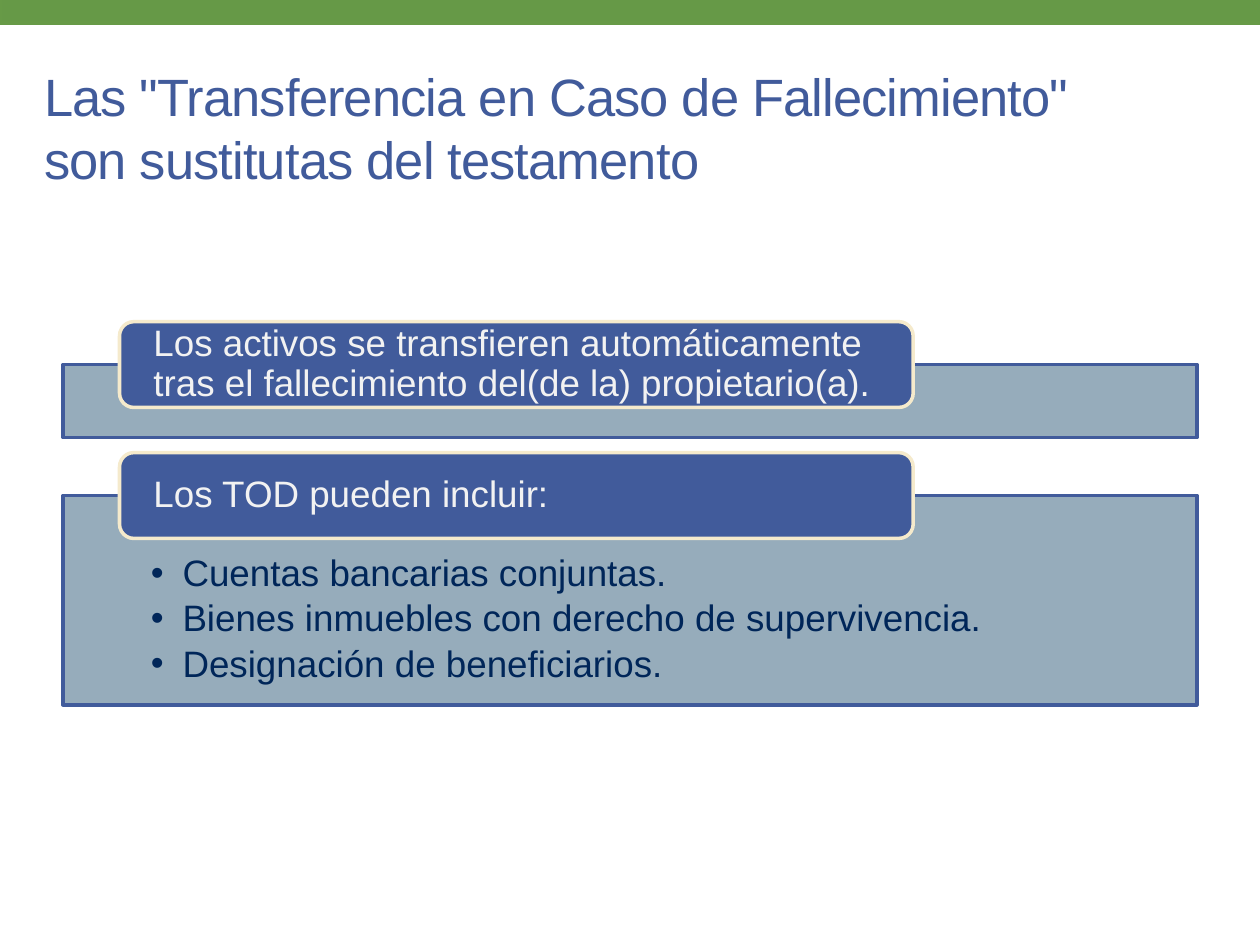
from dataclasses import dataclass

from lxml import etree
from pptx import Presentation
from pptx.dml.color import RGBColor
from pptx.enum.shapes import MSO_SHAPE
from pptx.enum.text import MSO_ANCHOR, PP_ALIGN
from pptx.oxml.ns import qn
from pptx.util import Cm, Pt

RECTANGLE = MSO_SHAPE.RECTANGLE
ROUNDED = MSO_SHAPE.ROUNDED_RECTANGLE
TOP, MIDDLE = MSO_ANCHOR.TOP, MSO_ANCHOR.MIDDLE
LEFT = PP_ALIGN.LEFT


@dataclass(frozen=True)
class Theme:
    font: str = "Arial"
    title_size: float = 30
    body_size: float = 21
    line_width: float = 2
    blue: str = "415B9B"
    navy: str = "002659"
    panel: str = "8BA4B4"
    cream: str = "F5EACC"
    label_text: str = "F2F2F2"
    green: str = "669947"
    green_line: str = "679A47"


@dataclass(frozen=True)
class Box:
    left: float
    top: float
    width: float
    height: float

    def lengths(self) -> tuple:
        return Cm(self.left), Cm(self.top), Cm(self.width), Cm(self.height)


@dataclass(frozen=True)
class Section:
    label: str
    height: float
    bullets: tuple = ()


THEME = Theme()
TITLE_LINES = ('Las "Transferencia en Caso de Fallecimiento" ', "son sustitutas del testamento")
SECTIONS = (
    Section("Los activos se transfieren automáticamente tras el fallecimiento "
            "del(de la) propietario(a).", 1.47),
    Section("Los TOD pueden incluir:", 4.22, (
        "Cuentas bancarias conjuntas.",
        "Bienes inmuebles con derecho de supervivencia.",
        "Designación de beneficiarios.",
    )),
)
FIRST_PANEL_TOP, PANEL_GAP = 7.35, 1.17
LABEL_HEIGHT = 1.73


def add_block(slide, preset, box: Box, fill: str, line: str):
    shape = slide.shapes.add_shape(preset, *box.lengths())
    shape.shadow.inherit = False
    shape.fill.solid()
    shape.fill.fore_color.rgb = RGBColor.from_string(fill)
    shape.line.color.rgb = RGBColor.from_string(line)
    shape.line.width = Pt(THEME.line_width)
    return shape


def prepare_frame(shape, margins: tuple, anchor):
    frame = shape.text_frame
    frame.word_wrap = True
    frame.vertical_anchor = anchor
    (frame.margin_left, frame.margin_top,
     frame.margin_right, frame.margin_bottom) = (Cm(margin) for margin in margins)
    return frame


def add_run(paragraph, text: str, size: float, color: str):
    paragraph.alignment = LEFT
    run = paragraph.add_run()
    run.text = text
    run.font.name = THEME.font
    run.font.size = Pt(size)
    run.font.color.rgb = RGBColor.from_string(color)
    return run


def add_title(slide) -> None:
    shape = slide.shapes.add_textbox(*Box(0.89, 1.26, 22.86, 2.62).lengths())
    paragraph = prepare_frame(shape, (0, 0, 0, 0), MIDDLE).paragraphs[0]
    for index, line in enumerate(TITLE_LINES):
        if index:
            paragraph.add_line_break()
        run = add_run(paragraph, line, THEME.title_size, THEME.blue)
        run.font._element.set("spc", "-50")


def add_bullets(shape, bullets: tuple) -> None:
    frame = prepare_frame(shape, (1.77, 1.2, 1.77, 0.41), TOP)
    for index, text in enumerate(bullets):
        paragraph = frame.add_paragraph() if index else frame.paragraphs[0]
        properties = paragraph._p.get_or_add_pPr()
        properties.set("marL", str(Cm(0.64)))
        properties.set("indent", str(Cm(-0.64)))
        etree.SubElement(properties, qn("a:buFont"), typeface=THEME.font)
        etree.SubElement(properties, qn("a:buChar"), char="•")
        paragraph.line_spacing = 0.9
        paragraph.space_after = Pt(3.15)
        add_run(paragraph, text, THEME.body_size, THEME.navy)


def add_section(slide, section: Section, top: float) -> None:
    # Translucent panel with its list
    panel = add_block(slide, RECTANGLE, Box(1.27, top, 22.86, section.height),
                      THEME.panel, THEME.blue)
    color = panel.fill._xPr.find(qn("a:solidFill"))[0]
    etree.SubElement(color, qn("a:alpha"), val="90000")
    if section.bullets:
        add_bullets(panel, section.bullets)

    # Label centred on the panel's top edge
    label = add_block(slide, ROUNDED, Box(2.41, top - LABEL_HEIGHT / 2, 16, LABEL_HEIGHT),
                      THEME.blue, THEME.cream)
    paragraph = prepare_frame(label, (0.6, 0, 0.6, 0), MIDDLE).paragraphs[0]
    paragraph.line_spacing = 0.9
    add_run(paragraph, section.label, THEME.body_size, THEME.label_text)


def main() -> None:
    presentation = Presentation()
    presentation.slide_width, presentation.slide_height = Cm(25.4), Cm(19.05)
    slide = presentation.slides.add_slide(presentation.slide_layouts[6])

    # Top band and title
    add_block(slide, RECTANGLE, Box(0, -0.05, 25.43, 0.52), THEME.green, THEME.green_line)
    add_title(slide)

    # Stacked sections
    top = FIRST_PANEL_TOP
    for section in SECTIONS:
        add_section(slide, section, top)
        top += section.height + PANEL_GAP

    presentation.save("out.pptx")


if __name__ == "__main__":
    main()
